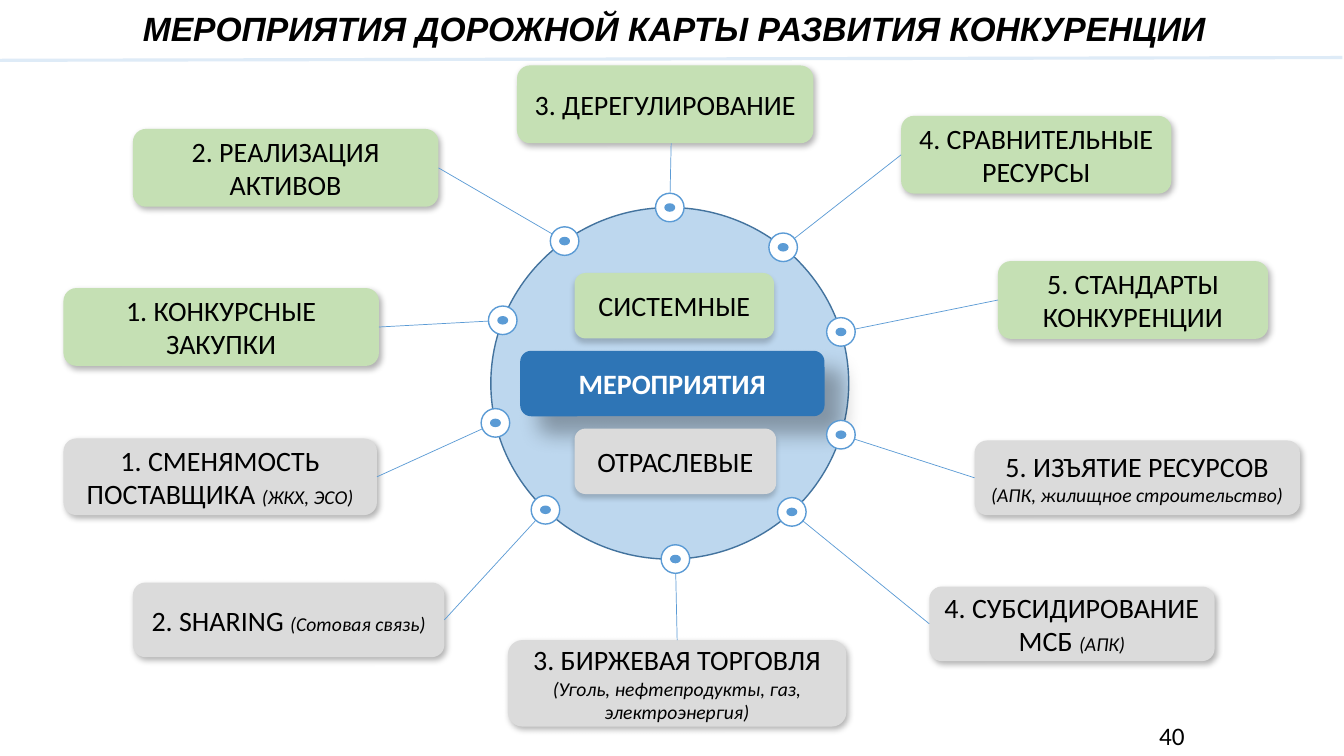
import math
import lxml.etree
import pptx
import pptx.dml.color
import pptx.enum.shapes
import pptx.enum.text
import pptx.oxml.ns
import pptx.util

Cm = pptx.util.Cm
Pt = pptx.util.Pt
RGB = pptx.dml.color.RGBColor
SHAPE = pptx.enum.shapes.MSO_SHAPE
ALIGN = pptx.enum.text.PP_ALIGN
qn = pptx.oxml.ns.qn

BLACK = RGB(0x00, 0x00, 0x00)
WHITE = RGB(0xFF, 0xFF, 0xFF)
GREEN = RGB(0xC5, 0xE0, 0xB4)
GRAY = RGB(0xDB, 0xDB, 0xDB)
BLUE = RGB(0x2E, 0x75, 0xB6)
PIN_BLUE = RGB(0x5B, 0x9B, 0xD5)
HUB_FILL = RGB(0xBD, 0xD7, 0xEE)
HUB_LINE = RGB(0x43, 0x73, 0x9E)
RULE_BLUE = RGB(0xDE, 0xEB, 0xF7)

MAIN = {"name": "Calibri", "size": Pt(20)}
NOTE = {"name": "Calibri", "size": Pt(14), "italic": True}
HEAD = {"name": "Arial", "size": Pt(24), "bold": True, "italic": True}
NUMBER = {"name": "Calibri", "size": Pt(18)}

CARD_SHADOW = (30, 4.5, 2.6, 53)
CORE_SHADOW = (30, 15, 18, 45)
LABEL_SHADOW = (20, 4, 3, 90)

PIN_R = 0.36
LEFT_EDGE, RIGHT_EDGE = (0, 0.5), (1, 0.5)
TOP_EDGE, BOTTOM_EDGE = (0.5, 0), (0.52, 1)

HUB = (12.37, 5.23, 9.02, 8.86)
SPOKES = [
    ((1.6, 7.26, 7.95, 1.96), GREEN, "1. КОНКУРСНЫЕ ЗАКУПКИ", "", 159, RIGHT_EDGE),
    ((3.35, 3.25, 7.7, 1.96), GREEN, "2. РЕАЛИЗАЦИЯ АКТИВОВ", "", 126, RIGHT_EDGE),
    ((13.03, 1.65, 7.47, 1.96), GREEN, "3. ДЕРЕГУЛИРОВАНИЕ", "", 90, BOTTOM_EDGE),
    ((22.71, 2.92, 6.81, 1.96), GREEN, "4. СРАВНИТЕЛЬНЫЕ РЕСУРСЫ", "", 50.7, LEFT_EDGE),
    ((25.15, 6.58, 6.81, 1.96), GREEN, "5. СТАНДАРТЫ КОНКУРЕНЦИИ", "", 17, LEFT_EDGE),
    ((1.6, 11.05, 7.9, 1.93), GRAY, "1. СМЕНЯМОСТЬ ПОСТАВЩИКА ", "(ЖКХ, ЭСО)", 193, RIGHT_EDGE),
    ((3.35, 14.68, 7.85, 1.88), GRAY, "2. SHARING ", "(Сотовая связь)", 226, RIGHT_EDGE),
    ((12.8, 16.13, 8.53, 2.18), GRAY, "3. БИРЖЕВАЯ ТОРГОВЛЯ ",
     "(Уголь, нефтепродукты, газ, электроэнергия)", 271.8, TOP_EDGE),
    ((23.42, 14.78, 7.19, 1.88), GRAY, "4. СУБСИДИРОВАНИЕ МСБ ", "(АПК)", 313, LEFT_EDGE),
    ((24.56, 11.1, 8.2, 1.88), GRAY, "5. ИЗЪЯТИЕ РЕСУРСОВ ",
     "(АПК, жилищное строительство)", 343, LEFT_EDGE),
]


def add_run(p, text, fmt, color=BLACK):
    r = p.add_run()
    r.text = text
    for key, value in fmt.items():
        setattr(r.font, key, value)
    r.font.color.rgb = color


def add_shape(shapes, kind, box, fill, line=None):
    sp = shapes.add_shape(kind, *map(Cm, box))
    sp.shadow.inherit = False
    sp.fill.solid()
    sp.fill.fore_color.rgb = fill
    if line is None:
        sp.line.fill.background()
    else:
        sp.line.color.rgb = line
        sp.line.width = Pt(1)
    return sp


def add_shadow(sp, opacity, blur, dist, angle):
    effects = sp._element.spPr.find(qn("a:effectLst"))
    shadow = lxml.etree.SubElement(effects, qn("a:outerShdw"), {
        "blurRad": str(Pt(blur)), "dist": str(Pt(dist)),
        "dir": str(angle * 60000), "algn": "t", "rotWithShape": "0"})
    color = lxml.etree.SubElement(shadow, qn("a:srgbClr"), val=str(BLACK))
    lxml.etree.SubElement(color, qn("a:alpha"), val=str(opacity * 1000))


def add_line(slide, start, end, color, width):
    cx = slide.shapes.add_connector(
        pptx.enum.shapes.MSO_CONNECTOR.STRAIGHT, *map(Cm, (*start, *end)))
    cx.line.color.rgb = color
    cx.line.width = Pt(width)
    lxml.etree.SubElement(cx._element.spPr, qn("a:effectLst"))


def add_text(sp, runs, color=BLACK):
    tf = sp.text_frame
    tf.word_wrap = True
    tf.vertical_anchor = pptx.enum.text.MSO_ANCHOR.MIDDLE
    p = tf.paragraphs[0]
    p.alignment = ALIGN.CENTER
    for text, fmt in runs:
        add_run(p, text, fmt, color)
    return p


def add_card(slide, box, fill, runs, shadow, color=BLACK):
    sp = add_shape(slide.shapes, SHAPE.ROUNDED_RECTANGLE, box, fill)
    add_shadow(sp, *shadow)
    add_text(sp, runs, color)


def add_header(slide, box):
    x, y, w, h = box
    sp = add_shape(slide.shapes, SHAPE.RECTANGLE, box, WHITE)
    p = add_text(sp, [("МЕРОПРИЯТИЯ ДОРОЖНОЙ КАРТЫ РАЗВИТИЯ КОНКУРЕНЦИИ", HEAD)])
    p.line_spacing = 0.9
    add_line(slide, (0, y + h + 0.04), (33.83, y + h - 0.03), RULE_BLUE, 2.25)


def add_hub(slide, box):
    x, y, w, h = box
    add_shape(slide.shapes, SHAPE.OVAL, box, HUB_FILL, HUB_LINE)
    core = {**MAIN, "bold": True}
    labels = [
        ("СИСТЕМНЫЕ", MAIN, 2.11, 5.03, GREEN, LABEL_SHADOW, BLACK),
        ("МЕРОПРИЯТИЯ", core, 0.74, 7.67, BLUE, CORE_SHADOW, WHITE),
        ("ОТРАСЛЕВЫЕ", MAIN, 2.11, 5.08, GRAY, LABEL_SHADOW, BLACK),
    ]
    for i in (1, 0, 2):
        text, fmt, dx, width, fill, shadow, color = labels[i]
        add_card(slide, (x + dx, y + 1.65 + i * 1.96, width, 1.65), fill,
                 [(text, fmt)], shadow, color)


def add_pin(slide, cx, cy):
    shapes = slide.shapes.add_group_shape().shapes
    for rx, ry, fill in ((PIN_R, PIN_R, WHITE), (0.12, 0.09, PIN_BLUE)):
        add_shape(shapes, SHAPE.OVAL, (cx - rx, cy - ry, 2 * rx, 2 * ry), fill, PIN_BLUE)


def add_spoke(slide, hub, box, fill, text, note, angle, edge):
    runs = [(text, MAIN)] + ([(note, NOTE)] if note else [])
    add_card(slide, box, fill, runs, CARD_SHADOW)
    hx, hy, hw, hh = hub
    a = math.radians(angle)
    cx = hx + hw / 2 * (1 + math.cos(a))
    cy = hy + hh / 2 * (1 - math.sin(a))
    x, y, w, h = box
    end = (x + w * edge[0], y + h * edge[1])
    k = PIN_R / math.dist((cx, cy), end)
    start = (cx + k * (end[0] - cx), cy + k * (end[1] - cy))
    add_line(slide, start, end, PIN_BLUE, 0.5)
    add_pin(slide, cx, cy)


def add_number(slide, box):
    tf = slide.shapes.add_textbox(*map(Cm, box)).text_frame
    tf.word_wrap = True
    add_run(tf.paragraphs[0], "40", NUMBER)


def main():
    prs = pptx.Presentation()
    prs.slide_width, prs.slide_height = Cm(33.87), Cm(19.05)
    slide = prs.slides.add_slide(prs.slide_layouts[6])
    add_header(slide, (0.38, 0.08, 33.22, 1.4))
    add_hub(slide, HUB)
    for spoke in SPOKES:
        add_spoke(slide, HUB, *spoke)
    add_number(slide, (28.96, 18.03, 4.88, 1.02))
    prs.save("out.pptx")


if __name__ == "__main__":
    main()
